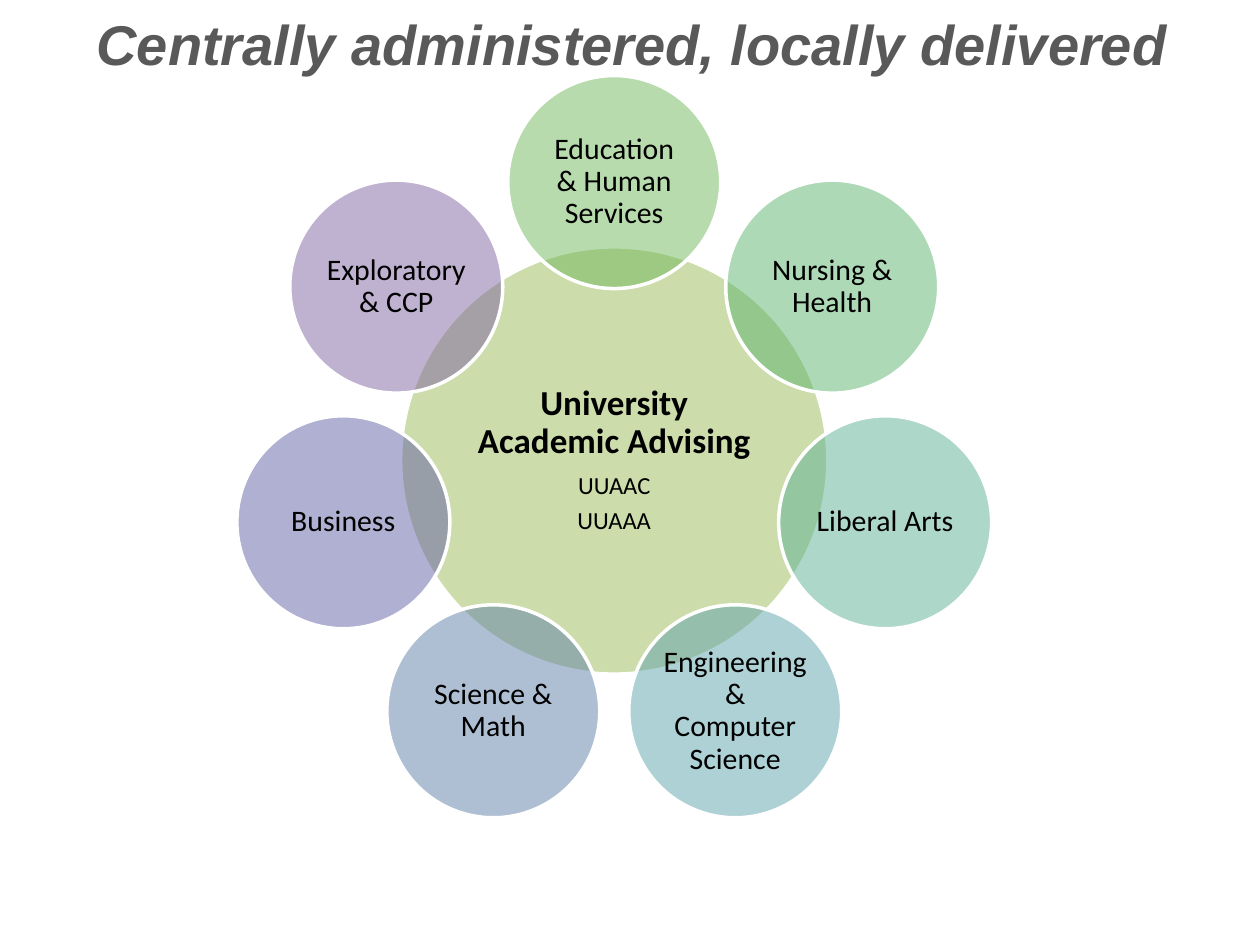
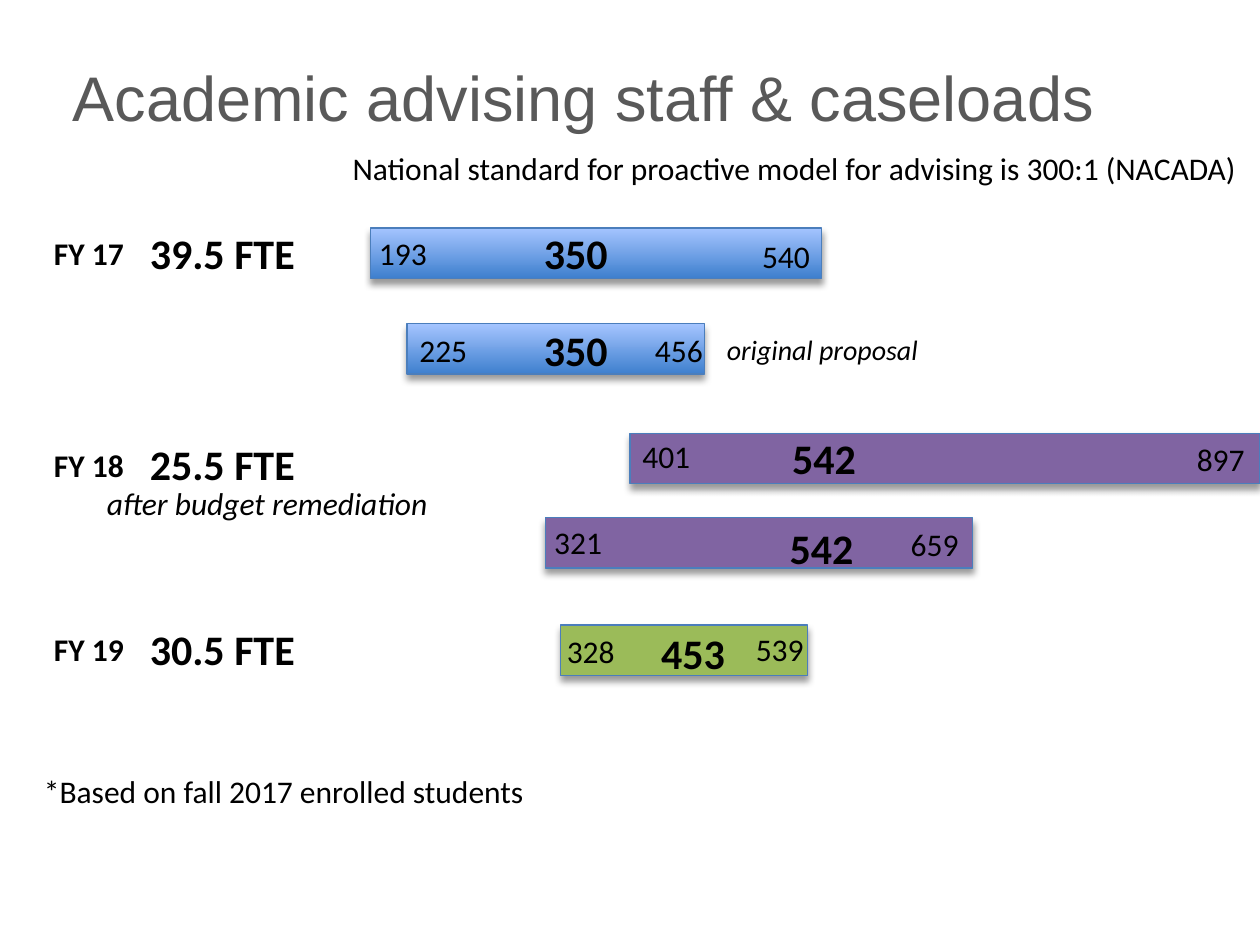
import math

import lxml.etree
import pptx
import pptx.dml.color
import pptx.enum.shapes
import pptx.enum.text
import pptx.oxml.ns
import pptx.util

PX = 9144
COLORS = {
    "text": "000000",
    "title": "595959",
    "white": "FFFFFF",
    "green": "9BBB59",
    "purple": "8064A2",
    "blue_dark": "3F80CE",
    "blue_light": "A4C4FF",
    "bar_line": "4B7EBC",
    "shadow": "000000",
}
BLUE = (COLORS["blue_dark"], COLORS["blue_light"])
HUB_CENTER = (487.5, 365.5)
HUB_SIZE = 339
COLLEGE_SIZE = 169
ORBIT = 221
COLLEGES = [
    ("Education & Human Services", "70B85A"),
    ("Nursing & Health", "5CB46F"),
    ("Liberal Arts", "5DB195"),
    ("Engineering & Computer Science", "5FA4AD"),
    ("Science & Math", "6181A9"),
    ("Business", "6362A6"),
    ("Exploratory & CCP", COLORS["purple"]),
]
STAFFING = [
    ("FY 17", 181, "39.5 FTE", 176),
    ("FY 18", 349, "25.5 FTE", 343),
    ("FY 19", 495, "30.5 FTE", 490),
]
CASELOADS = [
    ((294, 181, 358), BLUE, ("193", 291, 181), ("350", 417, 176), ("540", 595, 183)),
    ((323, 257, 236), BLUE, ("225", 323, 258), ("350", 417, 253), ("456", 510, 258)),
    ((500, 344, 500), COLORS["purple"],
     ("401", 500, 342), ("542", 614, 338), ("897", 940, 344)),
    ((433, 411, 339), COLORS["purple"],
     ("321", 430, 410), ("542", 612, 410), ("659", 713, 412)),
    ((445, 496, 196), COLORS["green"],
     ("328", 440, 497), ("453", 510, 493), ("539", 590, 495)),
]


def px(*lengths):
    return [pptx.util.Emu(length * PX) for length in lengths]


def rgb(color):
    return pptx.dml.color.RGBColor.from_string(color)


def add_child(parent, tag, **attributes):
    child = lxml.etree.SubElement(parent, pptx.oxml.ns.qn(tag))
    for name, value in attributes.items():
        child.set(name, str(value))
    return child


def write_paragraph(frame, text, size=18, font="Calibri", color=COLORS["text"],
                    bold=False, italic=False, centered=False,
                    line_spacing=None, space_after=None):
    para = frame.paragraphs[0]
    if para.runs:
        para = frame.add_paragraph()
    alignment = pptx.enum.text.PP_ALIGN
    para.alignment = alignment.CENTER if centered else alignment.LEFT
    para.line_spacing = line_spacing
    if space_after is not None:
        para.space_after = pptx.util.Pt(space_after)
    span = para.add_run()
    span.text = text
    span.font.name = font
    span.font.size = pptx.util.Pt(size)
    span.font.bold = bold
    span.font.italic = italic
    span.font.color.rgb = rgb(color)


def add_text(page, text, left, top, width, height=40, middle=False, **style):
    box = page.shapes.add_textbox(*px(left, top, width, height))
    frame = box.text_frame
    frame.word_wrap = True
    if middle:
        frame.vertical_anchor = pptx.enum.text.MSO_ANCHOR.MIDDLE
    write_paragraph(frame, text, **style)


def add_title(page, text, left, top, height, **style):
    add_text(page, text, left, top, 900, height, middle=True,
             font="Arial", color=COLORS["title"], **style)


def add_outlined_shape(page, kind, bounds, line_color, line_width):
    shape = page.shapes.add_shape(kind, *px(*bounds))
    shape.shadow.inherit = False
    shape.line.color.rgb = rgb(line_color)
    shape.line.width = pptx.util.Pt(line_width)
    return shape


def add_circle(page, center, size, color, lines, margin):
    left, top = (round(middle - size / 2) for middle in center)
    circle = add_outlined_shape(page, pptx.enum.shapes.MSO_SHAPE.OVAL,
                                (left, top, size, size), COLORS["white"], 2)
    circle.fill.solid()
    circle.fill.fore_color.rgb = rgb(color)
    fill_color = circle.fill._xPr.find(".//" + pptx.oxml.ns.qn("a:srgbClr"))
    add_child(fill_color, "a:alpha", val=50000)
    frame = circle.text_frame
    frame.word_wrap = True
    frame.vertical_anchor = pptx.enum.text.MSO_ANCHOR.MIDDLE
    frame.margin_left, frame.margin_top, frame.margin_right, frame.margin_bottom = px(
        margin, margin, margin, margin)
    for text, size, bold in lines:
        write_paragraph(frame, text, size=size, bold=bold, centered=True,
                        line_spacing=0.9, space_after=round(size * 0.35))


def add_bar(page, left, top, width, fill):
    bar = add_outlined_shape(page, pptx.enum.shapes.MSO_SHAPE.RECTANGLE,
                             (left, top, width, 40), COLORS["bar_line"], 0.75)
    if isinstance(fill, tuple):
        bar.fill.gradient()
        bar.fill.gradient_angle = 90
        for stop, color in zip(bar.fill.gradient_stops, fill):
            stop.color.rgb = rgb(color)
    else:
        bar.fill.solid()
        bar.fill.fore_color.rgb = rgb(fill)
    effects = bar._element.spPr.find(pptx.oxml.ns.qn("a:effectLst"))
    shadow = add_child(effects, "a:outerShdw", blurRad=pptx.util.Pt(4),
                       dist=pptx.util.Pt(3), dir=5400000, rotWithShape=0)
    shadow_color = add_child(shadow, "a:srgbClr", val=COLORS["shadow"])
    add_child(shadow_color, "a:alpha", val=40000)


def add_caseload(page, bounds, fill, low, average, high):
    add_bar(page, *bounds, fill)
    for label in (low, high):
        add_text(page, *label, 60)
    add_text(page, *average, 80, 50, size=24, bold=True, centered=True)


def build_advising_wheel(page):
    add_circle(page, HUB_CENTER, HUB_SIZE, COLORS["green"], [
        ("University Academic Advising", 20, True),
        ("UUAAC", 14, False),
        ("UUAAA", 14, False),
    ], 3)
    for index, (college, color) in enumerate(COLLEGES):
        angle = math.tau * index / len(COLLEGES)
        center = (HUB_CENTER[0] + ORBIT * math.sin(angle),
                  HUB_CENTER[1] - ORBIT * math.cos(angle))
        add_circle(page, center, COLLEGE_SIZE, color, [(college, 17, False)], 2)
    add_title(page, "Centrally administered, locally delivered", 52, 0, 69,
              size=32, bold=True, italic=True, centered=True)


def build_caseloads(page):
    add_title(page, "Academic advising staff & caseloads", 48, 14, 125, size=36)
    for year, year_top, staff, staff_top in STAFFING:
        add_text(page, year, 33, year_top, 109, bold=True)
        add_text(page, staff, 109, staff_top, 139, 50, size=24, bold=True)
    for caseload in CASELOADS:
        add_caseload(page, *caseload)
    add_text(page, "after budget remediation", 75, 379, 294, italic=True)
    add_text(page, "National standard for proactive model for advising is 300:1 (NACADA)",
             270, 113, 730)
    add_text(page, "original proposal", 567, 259, 174, 37, size=16, italic=True)
    add_text(page, "*Based on fall 2017 enrolled students", 25, 608, 406)


def main():
    deck = pptx.Presentation()
    deck.slide_width, deck.slide_height = px(1000, 750)
    blank = deck.slide_layouts[6]
    for build in (build_advising_wheel, build_caseloads):
        build(deck.slides.add_slide(blank))
    deck.save("out.pptx")


if __name__ == "__main__":
    main()
